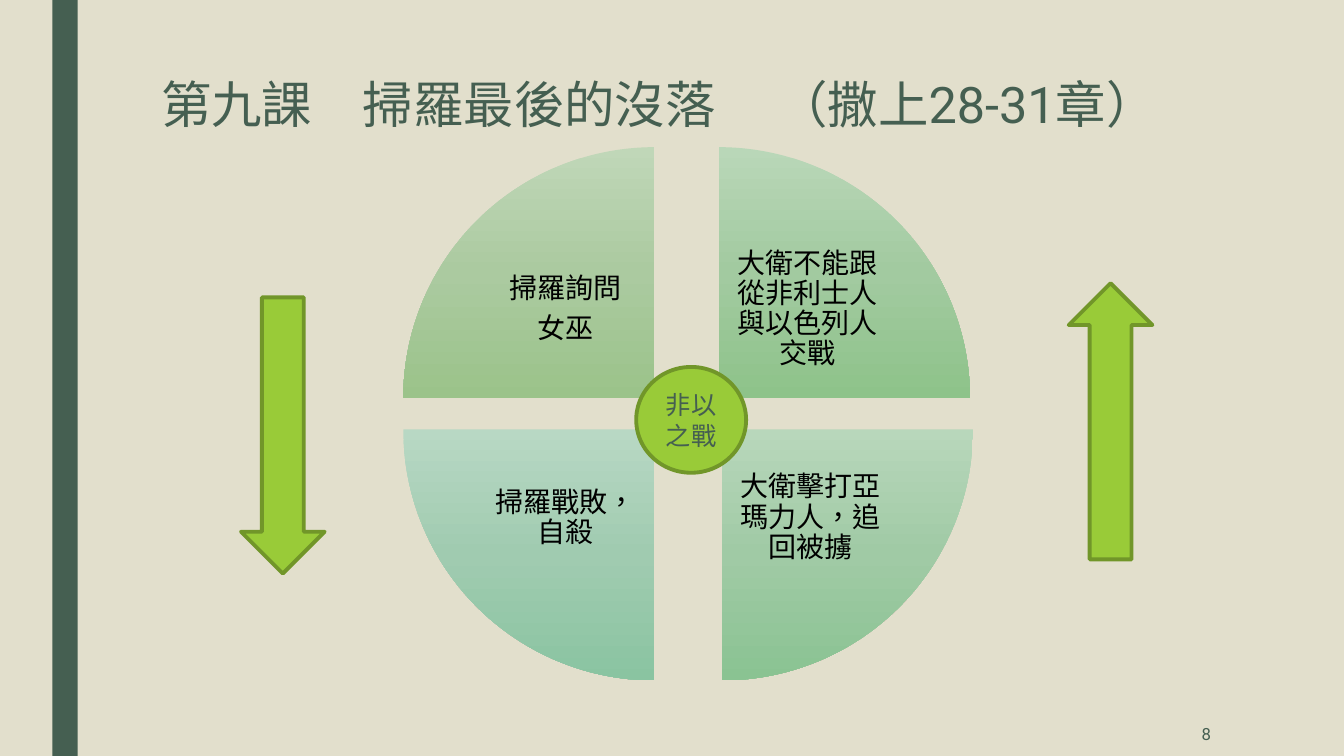
from lxml import etree
from pptx import Presentation
from pptx.dml.color import RGBColor
from pptx.enum.lang import MSO_LANGUAGE_ID as Lang
from pptx.enum.shapes import MSO_SHAPE as Shape
from pptx.enum.text import MSO_ANCHOR as Anchor, PP_ALIGN as Align
from pptx.oxml import parse_xml
from pptx.oxml.ns import nsdecls
from pptx.util import Inches, Pt

COLORS = {"paper": "E2DFCC", "pine": "455F51", "lime": "99CB38",
          "moss": "719629", "ink": "000000"}

deck = Presentation()
deck.slide_width, deck.slide_height = Inches(13.33), Inches(7.5)
slide = deck.slides.add_slide(deck.slide_layouts[6])
slide.background.fill.solid()
slide.background.fill.fore_color.rgb = RGBColor.from_string(COLORS["paper"])


def write(frame, lines, size, color, align, anchor=Anchor.MIDDLE, spacing=None, after=None):
    frame.word_wrap = True
    frame.vertical_anchor = anchor
    for i, line in enumerate(lines):
        paragraph = frame.paragraphs[0] if i == 0 else frame.add_paragraph()
        paragraph.alignment = align
        paragraph.line_spacing = spacing
        paragraph.space_after = after
        run = paragraph.add_run()
        run.text = line
        run.font.name = "Roboto"
        run.font.size = Pt(size)
        run.font.language_id = Lang.TRADITIONAL_CHINESE
        run.font.color.rgb = RGBColor.from_string(COLORS[color])


def add_figure(kind, left, top, width, height, fill, outline=None):
    figure = slide.shapes.add_shape(kind, Inches(left), Inches(top), Inches(width), Inches(height))
    figure.shadow.inherit = False
    figure.fill.solid()
    figure.fill.fore_color.rgb = RGBColor.from_string(COLORS[fill])
    if outline:
        figure.line.color.rgb = RGBColor.from_string(COLORS[outline])
        figure.line.width = Pt(2.75)
    else:
        figure.line.fill.background()
    return figure


# Side band, title and page number
add_figure(Shape.RECTANGLE, 0.52, 0, 0.25, 7.5, "pine")
title = slide.shapes.add_textbox(Inches(1.5), Inches(0.75), Inches(10.71), Inches(1.2))
write(title.text_frame, ["第九課\t掃羅最後的沒落 \t （撒上28-31章）"], 36, "pine",
      Align.LEFT, Anchor.TOP, 0.89)
page_number = slide.shapes.add_textbox(Inches(10.36), Inches(7.06), Inches(1.75), Inches(0.44))
write(page_number.text_frame, ["8"], 12, "pine", Align.RIGHT)

# Four quarters: left, top, rotation, gradient, lines
WEDGE, LABEL = 2.49, 1.76
quarters = [
    (4, 1.46, 0, ("C0D7B8", "ABCAA0", "9BC38A"), ["掃羅詢問", "女巫"]),
    (7.13, 1.46, 90, ("B9D7B8", "A2CAA0", "8EC38A"), ["大衛不能跟從非利士人與以色列人交戰"]),
    (7.16, 4.26, 180, ("B8D7BB", "A0CAA5", "8AC392"), ["大衛擊打亞瑪力人，追回被擄"]),
    (4, 4.26, 270, ("B8D8C4", "A0CBB0", "8AC4A1"), ["掃羅戰敗，自殺"]),
]
for left, top, rotation, shades, lines in quarters:
    wedge = add_figure(Shape.PIE_WEDGE, left, top, WEDGE, WEDGE, "lime")
    wedge.rotation = rotation
    # Three-stop gradient that stays vertical when the wedge turns
    stops = "".join(f'<a:gs pos="{i * 50000}"><a:srgbClr val="{shade}"/></a:gs>'
                    for i, shade in enumerate(shades))
    gradient = parse_xml(f'<a:gradFill {nsdecls("a")} rotWithShape="0"><a:gsLst>{stops}</a:gsLst>'
                         '<a:lin ang="5400000" scaled="0"/></a:gradFill>')
    properties = wedge.element.spPr
    properties.replace(properties.find("{*}solidFill"), gradient)

    # The label sits in the corner nearest the centre
    label_left = left + WEDGE - LABEL if left == 4 else left
    label_top = top + WEDGE - LABEL if top == 1.46 else top
    label = slide.shapes.add_textbox(Inches(label_left), Inches(label_top),
                                     Inches(LABEL), Inches(LABEL))
    frame = label.text_frame
    frame.margin_left = frame.margin_right = Inches(0.16)
    frame.margin_top = frame.margin_bottom = Inches(0.16)
    write(frame, lines, 20, "ink", Align.CENTER, spacing=0.9, after=Pt(7))

# Central battle
battle = add_figure(Shape.OVAL, 6.31, 3.64, 1.09, 1.05, "lime", "moss")
write(battle.text_frame, ["非以之戰"], 18, "pine", Align.CENTER)

# David rises, Saul falls
for left, top, rotation in [(10.6, 2.81, 0), (2.39, 2.95, 180)]:
    arrow = add_figure(Shape.UP_ARROW, left, top, 0.83, 2.74, "lime", "moss")
    arrow.rotation = rotation

deck.save("out.pptx")
